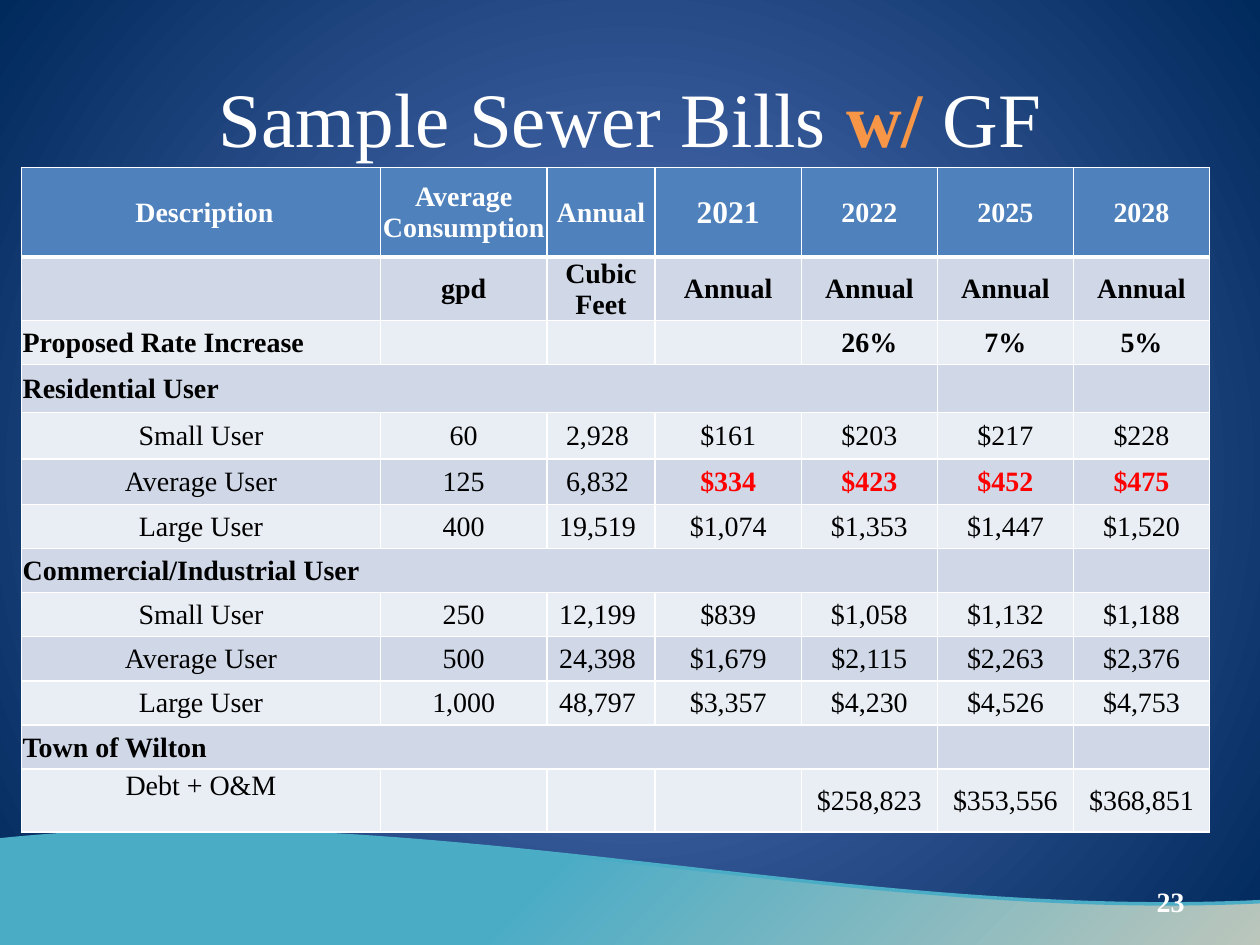
from lxml.etree import SubElement
from pptx import Presentation
from pptx.dml.color import RGBColor
from pptx.enum.shapes import MSO_SHAPE
from pptx.enum.text import MSO_ANCHOR, PP_ALIGN
from pptx.oxml import parse_xml
from pptx.oxml.ns import nsdecls, qn
from pptx.util import Inches, Pt

WHITE = RGBColor(0xFF, 0xFF, 0xFF)
BLACK = RGBColor(0, 0, 0)
RED = RGBColor(0xFF, 0, 0)
ORANGE = RGBColor(0xF7, 0x96, 0x46)
TEAL = RGBColor(0x4B, 0xAC, 0xC6)
PEACH = RGBColor(0xFC, 0xD5, 0xB5)
SKY = RGBColor(0x5E, 0x7C, 0xC5)
NAVY = RGBColor(0, 0x29, 0x5C)
HEADER_BLUE = RGBColor(0x4F, 0x81, 0xBD)
BAND_DARK = RGBColor(0xD0, 0xD8, 0xE8)
BAND_LIGHT = RGBColor(0xE9, 0xED, 0xF4)
FONT = "Times New Roman"

COLUMN_WIDTHS = [2.85, 1.32, 0.86, 1.16] + [1.08] * 3
ROW_HEIGHTS = [0.71, 0.48, 0.35, 0.38, 0.37, 0.36] + [0.35] * 6 + [0.5]
ROWS = [
    [" Description", "Average\nConsumption", "Annual", "2021", "2022", "2025", "2028"],
    ["", "gpd", "Cubic Feet", "Annual", "Annual", "Annual", "Annual"],
    ["Proposed Rate Increase", "", "", "", "26%", "7%", "5%"],
    ["Residential User"],
    ["Small User", "60", "2,928 ", "$161", "$203", "$217", "$228"],
    ["Average User", "125", "6,832 ", "$334", "$423", "$452", "$475"],
    ["Large User", "400", "19,519 ", "$1,074", "$1,353", "$1,447", "$1,520"],
    ["Commercial/Industrial User "],
    ["Small User", "250", "12,199 ", "$839", "$1,058", "$1,132", "$1,188"],
    ["Average User", "500", "24,398 ", "$1,679", "$2,115", "$2,263", "$2,376"],
    ["Large User", "1,000", "48,797 ", "$3,357", "$4,230", "$4,526", "$4,753"],
    ["Town of Wilton"],
    ["Debt + O&M", "", "", "", "$258,823", "$353,556", "$368,851"],
]
BOLD_ROWS = 3
HIGHLIGHT_ROW, HIGHLIGHT_COLUMN = 5, 3
SECTION_SPAN = 5


def set_font(font, size, color, bold=False):
    for name, value in {"name": FONT, "size": Pt(size), "bold": bold}.items():
        setattr(font, name, value)
    font.color.rgb = color


def set_radial_gradient(fill, stops, center):
    fill.gradient()
    gradient = fill._fill._gradFill
    for child in list(gradient):
        gradient.remove(child)
    stop_list = SubElement(gradient, qn("a:gsLst"))
    for position, color in stops:
        stop = SubElement(stop_list, qn("a:gs"), pos=str(position * 1000))
        SubElement(stop, qn("a:srgbClr"), val=str(color))
    circle = SubElement(gradient, qn("a:path"), path="circle")
    edges = {side: str(share * 1000) for side, share in zip("ltrb", center)}
    SubElement(circle, qn("a:fillToRect"), edges)


presentation = Presentation()
presentation.slide_width, presentation.slide_height = Inches(10), Inches(7.5)
slide = presentation.slides.add_slide(presentation.slide_layouts[5])

# Background and wave
set_radial_gradient(slide.background.fill, [(0, SKY), (100, NAVY)], (50, 50, 50, 50))
wave = slide.shapes.add_shape(
    MSO_SHAPE.WAVE, Inches(-1.33), Inches(6.58), Inches(13.42), Inches(2.42))
wave.shadow.inherit = False
set_radial_gradient(wave.fill, [(0, PEACH), (62, TEAL), (100, TEAL)], (100, 100, 0, 0))
wave.line.color.rgb = TEAL
wave.line.width = Pt(2)

# Title
title = slide.shapes.title
title.left, title.top, title.width, title.height = map(Inches, (0.5, 0.3, 9, 1.25))
title.text_frame.vertical_anchor = MSO_ANCHOR.MIDDLE
paragraph = title.text_frame.paragraphs[0]
paragraph.alignment = PP_ALIGN.CENTER
for text, color, bold in [("Sample Sewer Bills ", WHITE, False),
                          ("w/", ORANGE, True), (" GF", WHITE, False)]:
    run = paragraph.add_run()
    run.text = text
    set_font(run.font, 44, color, bold)

# Sewer bill table
table = slide.shapes.add_table(
    len(ROWS), len(COLUMN_WIDTHS), Inches(0.17), Inches(1.33),
    Inches(sum(COLUMN_WIDTHS)), Inches(sum(ROW_HEIGHTS))).table
for column, width in zip(table.columns, COLUMN_WIDTHS):
    column.width = Inches(width)
for row, height in zip(table.rows, ROW_HEIGHTS):
    row.height = Inches(height)

for row_index, texts in enumerate(ROWS):
    is_header = row_index == 0
    is_section = len(texts) == 1
    if is_section:
        table.cell(row_index, 0).merge(table.cell(row_index, SECTION_SPAN - 1))
    for column_index in range(len(COLUMN_WIDTHS)):
        cell = table.cell(row_index, column_index)
        margins = {"margin_left": 0.01, "margin_top": 0.01,
                   "margin_right": 0.01, "margin_bottom": 0}
        for name, value in margins.items():
            setattr(cell, name, Inches(value))
        is_last_label = row_index == len(ROWS) - 1 and column_index == 0
        cell.vertical_anchor = MSO_ANCHOR.TOP if is_last_label else MSO_ANCHOR.MIDDLE
        cell.fill.solid()
        band = BAND_DARK if row_index % 2 else BAND_LIGHT
        cell.fill.fore_color.rgb = HEADER_BLUE if is_header else band

        # White borders, thicker around the header's lower edge
        for index, side in enumerate("LRTB"):
            thick = (is_header and side == "B") or (row_index == 1 and side == "T")
            cell._tc.get_or_add_tcPr().insert(index, parse_xml(
                f'<a:ln{side} {nsdecls("a")} w="{Pt(3 if thick else 1)}"><a:solidFill>'
                f'<a:srgbClr val="{WHITE}"/></a:solidFill></a:ln{side}>'))

        if column_index >= len(texts) or not texts[column_index]:
            continue
        highlighted = row_index == HIGHLIGHT_ROW and column_index >= HIGHLIGHT_COLUMN
        color = WHITE if is_header else RED if highlighted else BLACK
        size = 18 if texts[column_index] == "2021" else 16
        is_left = is_section or (row_index == 2 and column_index == 0)
        cell.text = texts[column_index]
        for paragraph in cell.text_frame.paragraphs:
            paragraph.alignment = PP_ALIGN.LEFT if is_left else PP_ALIGN.CENTER
            for run in paragraph.runs:
                set_font(run.font, size, color,
                         row_index < BOLD_ROWS or is_section or highlighted)

# Slide number
number_box = slide.shapes.add_textbox(Inches(7.17), Inches(6.95), Inches(2.33), Inches(0.4))
number_box.text_frame.word_wrap = True
number_box.text_frame.vertical_anchor = MSO_ANCHOR.MIDDLE
paragraph = number_box.text_frame.paragraphs[0]
paragraph.alignment = PP_ALIGN.RIGHT
run = paragraph.add_run()
run.text = "23"
set_font(run.font, 16, WHITE, True)

presentation.save("out.pptx")
